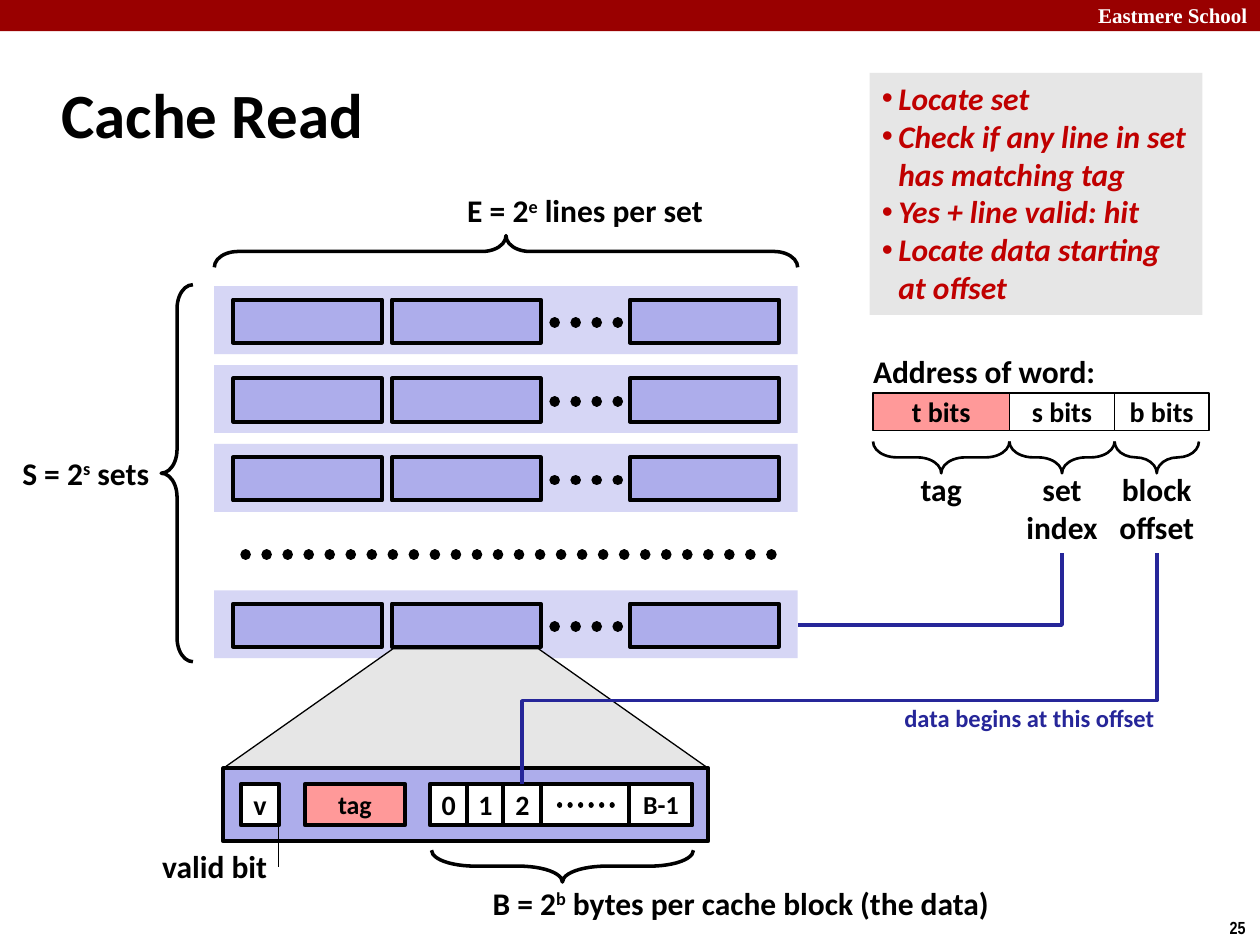
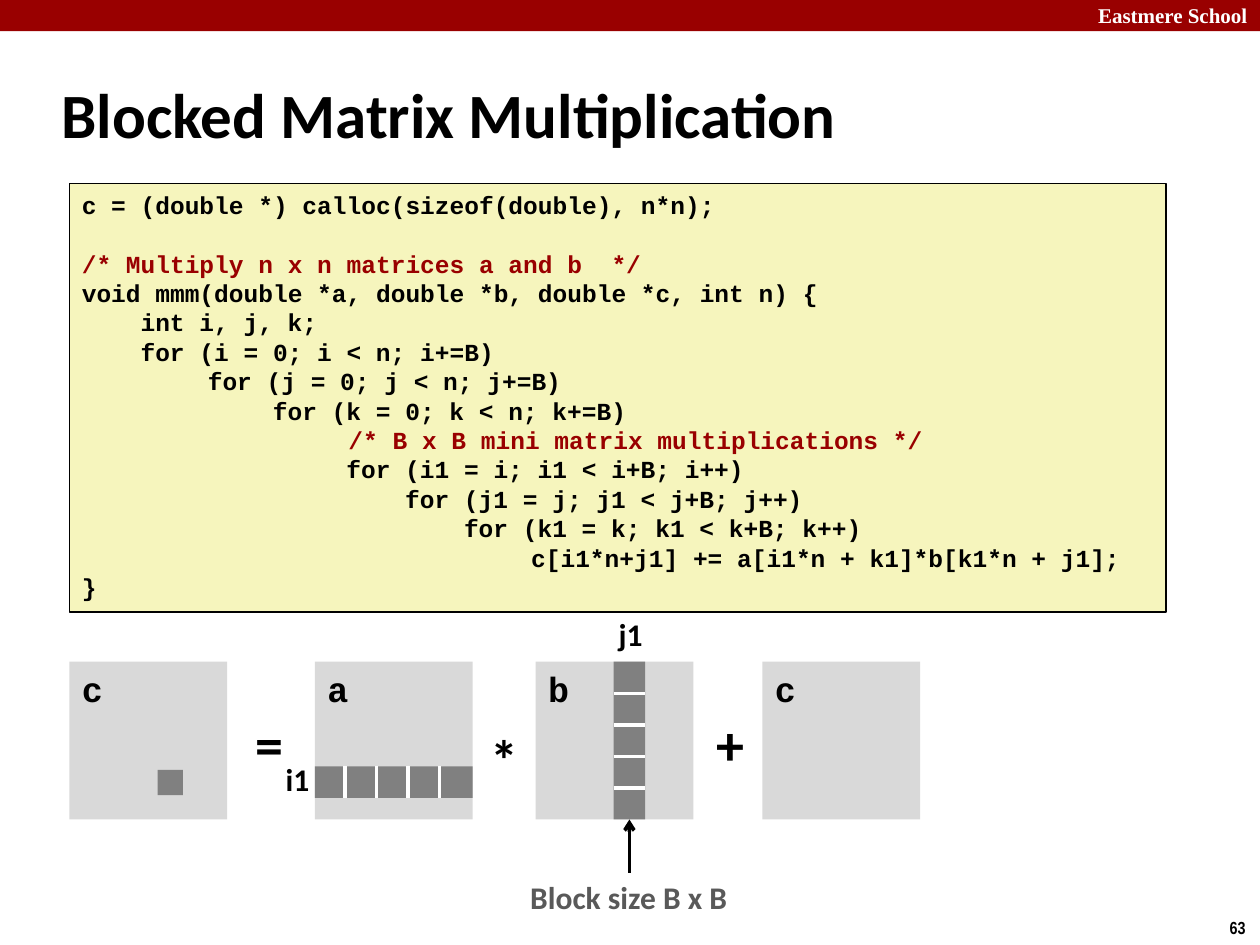
from dataclasses import dataclass
from itertools import accumulate

from lxml import etree
from pptx import Presentation
from pptx.dml.color import RGBColor
from pptx.enum.dml import MSO_LINE
from pptx.enum.shapes import MSO_CONNECTOR, MSO_SHAPE
from pptx.enum.text import MSO_ANCHOR, PP_ALIGN
from pptx.oxml.ns import qn
from pptx.util import Cm, Pt

RECT, BRACE, TRAPEZOID = MSO_SHAPE.RECTANGLE, MSO_SHAPE.LEFT_BRACE, MSO_SHAPE.TRAPEZOID
STRAIGHT, ELBOW = MSO_CONNECTOR.STRAIGHT, MSO_CONNECTOR.ELBOW
DOTTED = MSO_LINE.ROUND_DOT
LEFT, CENTER, RIGHT = PP_ALIGN.LEFT, PP_ALIGN.CENTER, PP_ALIGN.RIGHT
TOP, MIDDLE = MSO_ANCHOR.TOP, MSO_ANCHOR.MIDDLE
UP, DOWN = 90, 270


@dataclass(frozen=True)
class Theme:
    black: str = "000000"
    white: str = "FFFFFF"
    crimson: str = "990000"
    red: str = "C00000"
    pink: str = "FF9999"
    navy: str = "262699"
    lavender: str = "ADADEB"
    pale_lavender: str = "D6D6F5"
    pale_gray: str = "E6E6E6"
    matrix_gray: str = "D9D9D9"
    block_gray: str = "808080"
    caption_gray: str = "595959"
    code_yellow: str = "F6F5BD"
    body_font: str = "Calibri"
    code_font: str = "Courier New"
    band_font: str = "Times New Roman"
    page_font: str = "Arial Narrow"
    title: float = 36
    operator: float = 32
    matrix: float = 20
    label: float = 18
    cell: float = 16
    small_cell: float = 14.8
    note: float = 14
    code: float = 14
    code_pitch: float = 16.8
    band: float = 12
    page: float = 10


THEME = Theme()


@dataclass(frozen=True)
class Box:
    """A rectangle in centimetres."""
    left: float
    top: float
    width: float
    height: float

    def inner(self, dx, dy, width, height):
        return Box(self.left + dx, self.top + dy, width, height)

    def emu(self):
        return Cm(self.left), Cm(self.top), Cm(self.width), Cm(self.height)

    @property
    def right(self):
        return self.left + self.width

    @property
    def center_x(self):
        return self.left + self.width / 2

    @property
    def bottom(self):
        return self.top + self.height


def color(code):
    return RGBColor.from_string(code)


def write(shape, lines, size, ink=THEME.black, font=THEME.body_font,
          align=LEFT, anchor=TOP, inset=0.25):
    """Fill a shape with bold paragraphs; text between carets is superscript."""
    frame = shape.text_frame
    frame.word_wrap = False
    frame.vertical_anchor = anchor
    frame.margin_left = frame.margin_right = Cm(inset)
    for index, line in enumerate(lines):
        paragraph = frame.paragraphs[0] if index == 0 else frame.add_paragraph()
        paragraph.alignment = align
        paragraph.font.name = font
        paragraph.font.size = Pt(size)
        paragraph.font.bold = True
        paragraph.font.color.rgb = color(ink)
        if "^" not in line:
            paragraph.text = line
            continue
        for part, words in enumerate(line.split("^")):
            run = paragraph.add_run()
            run.text = words
            if part % 2:
                run._r.get_or_add_rPr().set("baseline", "30000")
    return frame.paragraphs


def add_label(slide, box, text, size=THEME.label, **style):
    return write(slide.shapes.add_textbox(*box.emu()), text.split("\n"), size, **style)


def add_block(slide, box, fill=None, weight=0, kind=RECT):
    block = slide.shapes.add_shape(kind, *box.emu())
    block.shadow.inherit = False
    if fill:
        block.fill.solid()
        block.fill.fore_color.rgb = color(fill)
    else:
        block.fill.background()
    if weight:
        block.line.color.rgb = color(THEME.black)
        block.line.width = Pt(weight)
    else:
        block.line.fill.background()
    return block


def add_cell(slide, box, text, fill=THEME.white, weight=2.25, size=THEME.cell):
    write(add_block(slide, box, fill, weight), [text], size,
          align=CENTER, anchor=MIDDLE, inset=0)


def add_brace(slide, box, rotation=0, weight=2, curl=0.75):
    """Draw a brace filling the box; a turned brace points up or down."""
    if rotation:
        shift = (box.width - box.height) / 2
        box = box.inner(shift, -shift, box.height, box.width)
    brace = add_block(slide, box, weight=weight, kind=BRACE)
    brace.adjustments[0] = curl
    brace.rotation = rotation


def add_line(slide, start, end, weight, ink=THEME.black, kind=STRAIGHT, dotted=False):
    line = slide.shapes.add_connector(kind, *map(Cm, (*start, *end)))
    line.line.color.rgb = color(ink)
    line.line.width = Pt(weight)
    if dotted:
        line.line.dash_style = DOTTED
        line.line._get_or_add_ln().set("cap", "rnd")
    etree.SubElement(line._element.spPr, qn("a:effectLst"))
    return line


def add_drop(slide, start, end, bend=None):
    """Elbow running down, then left, and down again when a bend ratio is given."""
    (x1, y1), (x2, y2) = start, end
    mid_x, mid_y = (x1 + x2) / 2, (y1 + y2) / 2
    half_run, half_drop = (x1 - x2) / 2, (y2 - y1) / 2
    drop = add_line(slide, (mid_x - half_drop, mid_y - half_run),
                    (mid_x + half_drop, mid_y + half_run), 2, THEME.navy, ELBOW)
    properties = drop._element.spPr
    properties.find(qn("a:xfrm")).set("rot", "5400000")
    geometry = properties.find(qn("a:prstGeom"))
    if bend is None:
        geometry.set("prst", "bentConnector2")
    else:
        guides = geometry.find(qn("a:avLst"))
        etree.SubElement(guides, qn("a:gd"), name="adj1", fmla=f"val {round(bend * 100000)}")


def add_page(deck, title, number):
    slide = deck.slides.add_slide(deck.slide_layouts[6])
    add_block(slide, Box(0, 0, 25.4, 0.63), THEME.crimson)
    add_label(slide, Box(21.77, -0.08, 3.63, 0.76), "Eastmere School", THEME.band,
              ink=THEME.white, font=THEME.band_font, align=RIGHT)
    add_label(slide, Box(24.54, 18.36, 0.86, 0.69), number, THEME.page, font=THEME.page_font)
    add_label(slide, Box(0.99, 1.22, 21.08, 2.11), title, THEME.title, anchor=MIDDLE)
    return slide


def add_cache_set(slide, box):
    add_block(slide, box, THEME.pale_lavender)
    for dx in (0.38, 3.58, 8.38):
        add_block(slide, box.inner(dx, 0.27, 3, 0.87), THEME.lavender, 2.25)
    dots_y = box.top + 0.73
    add_line(slide, (box.left + 6.86, dots_y), (box.left + 8.41, dots_y), 6, dotted=True)


def add_cache(slide, box):
    for dy in (0, 1.59, 3.18, 6.13):
        add_cache_set(slide, box.inner(0, dy, box.width, 1.37))
    dots_y = box.top + 5.41
    add_line(slide, (box.left + 0.63, dots_y), (box.right - 0.36, dots_y), 6, dotted=True)
    add_brace(slide, box.inner(0, -1.02, box.width, 0.64), UP)
    add_brace(slide, box.inner(-1.07, -0.03, 0.64, 7.6))
    add_label(slide, box.inner(4.85, -2.04, 5.44, 1.02), "E = 2^e^ lines per set")
    add_label(slide, box.inner(-4.12, 3.25, 3.12, 1.02), "S = 2^s^ sets")


def add_cache_line(slide, box):
    """One cache line enlarged, with the funnel that leads to it above."""
    funnel = add_block(slide, box.inner(0, -2.41, box.width, 2.41),
                       THEME.pale_gray, 0.75, TRAPEZOID)
    funnel.adjustments[0] = 1.42
    add_block(slide, box, THEME.lavender, 2.25)
    cell_top, cell_height = 0.31, 0.84
    valid = box.inner(0.36, cell_top, 0.76, cell_height)
    add_cell(slide, valid, "v")
    add_cell(slide, box.inner(1.65, cell_top, 2.01, cell_height), "tag",
             THEME.pink, size=THEME.small_cell)
    widths = (0.75, 0.73, 0.76, 1.78, 1.27)
    lefts = accumulate(widths, initial=4.17)
    for text, dx, width in zip(("0", "1", "2", "", "B-1"), lefts, widths):
        size = THEME.small_cell if text == "B-1" else THEME.cell
        add_cell(slide, box.inner(dx, cell_top, width, cell_height), text, size=size)
    dots_y = box.top + 0.74
    add_line(slide, (box.left + 6.78, dots_y), (box.left + 8.05, dots_y), 3, dotted=True)
    add_line(slide, (valid.right, valid.bottom + 0.83), (valid.right, valid.bottom), 0.75)
    add_label(slide, box.inner(-1.48, 1.47, 2.64, 1.02), "valid bit")
    add_brace(slide, box.inner(4.2, 1.65, 5.28, 0.64), DOWN, curl=1.37)
    add_label(slide, box.inner(5.18, 2.2, 10.64, 1.02),
              "B = 2^b^ bytes per cache block (the data)")


def add_address(slide, box):
    """Address fields with their meanings; returns the centre x of each brace."""
    add_label(slide, box.inner(-0.25, -0.94, 5.03, 1.02), "Address of word:")
    fields = (("t bits", "tag", THEME.pink, 2.75, 2.75),
              ("s bits", "set\nindex", THEME.white, 2.12, 2.12),
              ("b bits", "block\noffset", THEME.white, 1.9, 1.7))
    dx, centers = 0, []
    for bits, meaning, fill, width, brace_width in fields:
        add_cell(slide, box.inner(dx, 0, width, box.height), bits, fill, 1)
        brace = box.inner(dx, 0.98, brace_width, 0.64)
        add_brace(slide, brace, DOWN, 1.5)
        lines = meaning.count("\n") + 1
        label = Box(brace.center_x - 1.03, box.top + 1.43, 2.06, 0.25 + 0.77 * lines)
        add_label(slide, label, meaning, align=CENTER)
        centers.append(brace.center_x)
        dx += width
    return centers


def add_steps(slide, box, steps):
    for step in write(add_block(slide, box, THEME.pale_gray), steps, THEME.label, THEME.red):
        step.font.italic = True
        properties = step._p.get_or_add_pPr()
        properties.set("marL", str(Cm(0.33)))
        properties.set("indent", str(-Cm(0.33)))
        etree.SubElement(properties, qn("a:buFont"), typeface="Arial")
        etree.SubElement(properties, qn("a:buChar"), char="•")


def add_code(slide, box):
    listing = (  # tab stops, characters, code
        (0, 0, "c = (double *) calloc(sizeof(double), n*n);"),
        (0, 0, "/* Multiply n x n matrices a and b  */"),
        (0, 0, "void mmm(double *a, double *b, double *c, int n) {"),
        (0, 4, "int i, j, k;"),
        (0, 4, "for (i = 0; i < n; i+=B)"),
        (1, 0, "for (j = 0; j < n; j+=B)"),
        (0, 13, "for (k = 0; k < n; k+=B)"),
        (2, 1, "/* B x B mini matrix multiplications */"),
        (0, 18, "for (i1 = i; i1 < i+B; i++)"),
        (0, 22, "for (j1 = j; j1 < j+B; j++)"),
        (0, 26, "for (k1 = k; k1 < k+B; k++)"),
        (1, 22, "c[i1*n+j1] += a[i1*n + k1]*b[k1*n + j1];"),
        (0, 0, "}"))
    paragraphs = write(add_block(slide, box, THEME.code_yellow, 1),
                       [code for _, _, code in listing], THEME.code, font=THEME.code_font)
    character = Pt(THEME.code) * 0.6
    for paragraph, (tabs, characters, code) in zip(paragraphs, listing):
        indent = round(Cm(2.54) * tabs + character * characters)
        paragraph._p.get_or_add_pPr().set("marL", str(indent))
        paragraph.line_spacing = Pt(THEME.code_pitch)
        if code.startswith("/*"):
            paragraph.font.color.rgb = color(THEME.crimson)
    paragraphs[1].space_before = Pt(THEME.code_pitch)


def add_equation(slide, box):
    """c = a * b + c as squares as high as the box, with the blocks in use marked."""
    side = box.height
    block = side / 5
    target, a, b, addend = (box.inner(dx, 0, side, side) for dx in (0, 4.95, 9.4, 13.97))
    for name, matrix in zip("cabc", (target, a, b, addend)):
        write(add_block(slide, matrix, THEME.matrix_gray), [name],
              THEME.matrix, font=THEME.code_font)
    for sign, dx, dy in (("=", 3.5, 0.83), ("*", 8.23, 1.14), ("+", 12.8, 0.83)):
        add_label(slide, box.inner(dx, dy, 1.09, 1.63), sign, THEME.operator)
    row = a.inner(0, 2.11, side, block)
    column = b.inner(1.57, 0, block, side)
    for area in (target.inner(1.78, 2.18, 0.51, 0.51), row, column):
        add_block(slide, area, THEME.block_gray)
    for step in range(1, 5):
        x, y = row.left + step * block - 0.03, column.top + step * block
        add_line(slide, (x, row.top), (x, row.bottom), 2, THEME.white)
        add_line(slide, (column.left, y), (column.right, y), 2, THEME.white)
    add_label(slide, a.inner(-0.84, 1.85, 0.99, 1.02), "i1")
    add_label(slide, b.inner(1.42, -1.07, 0.99, 1.02), "j1")
    add_label(slide, b.inner(-0.36, 4.24, 4.52, 1.02), "Block size B x B", ink=THEME.caption_gray)
    pointer = add_line(slide, (column.center_x, b.bottom + 1.07), (column.center_x, b.bottom), 2)
    etree.SubElement(pointer.line._get_or_add_ln(), qn("a:tailEnd"), type="arrow")


def build_cache_read(deck):
    slide = add_page(deck, "Cache Read", "25")
    add_cache(slide, Box(4.32, 5.77, 11.76, 7.5))
    add_cache_line(slide, Box(4.5, 15.49, 9.78, 1.47))
    _, index_x, offset_x = add_address(slide, Box(17.6, 7.92, 6.77, 0.76))
    add_drop(slide, (index_x, 11.15), (16.08, 12.6))
    add_drop(slide, (offset_x, 11.15), (10.52, 15.8), 0.64)
    add_label(slide, Box(17.98, 14.05, 5.59, 0.86), "data begins at this offset",
              THEME.note, ink=THEME.navy)
    add_steps(slide, Box(17.53, 1.47, 6.71, 4.88),
              ["Locate set", "Check if any line in set\vhas matching tag",
               "Yes + line valid: hit", "Locate data starting\vat offset"])


def build_blocked_multiplication(deck):
    slide = add_page(deck, "Blocked Matrix Multiplication", "63")
    add_code(slide, Box(1.4, 3.7, 22.1, 8.64))
    add_equation(slide, Box(1.4, 13.34, 17.15, 3.18))


def main():
    deck = Presentation()
    deck.slide_width, deck.slide_height = Cm(25.4), Cm(19.05)
    build_cache_read(deck)
    build_blocked_multiplication(deck)
    deck.save("out.pptx")


if __name__ == "__main__":
    main()
